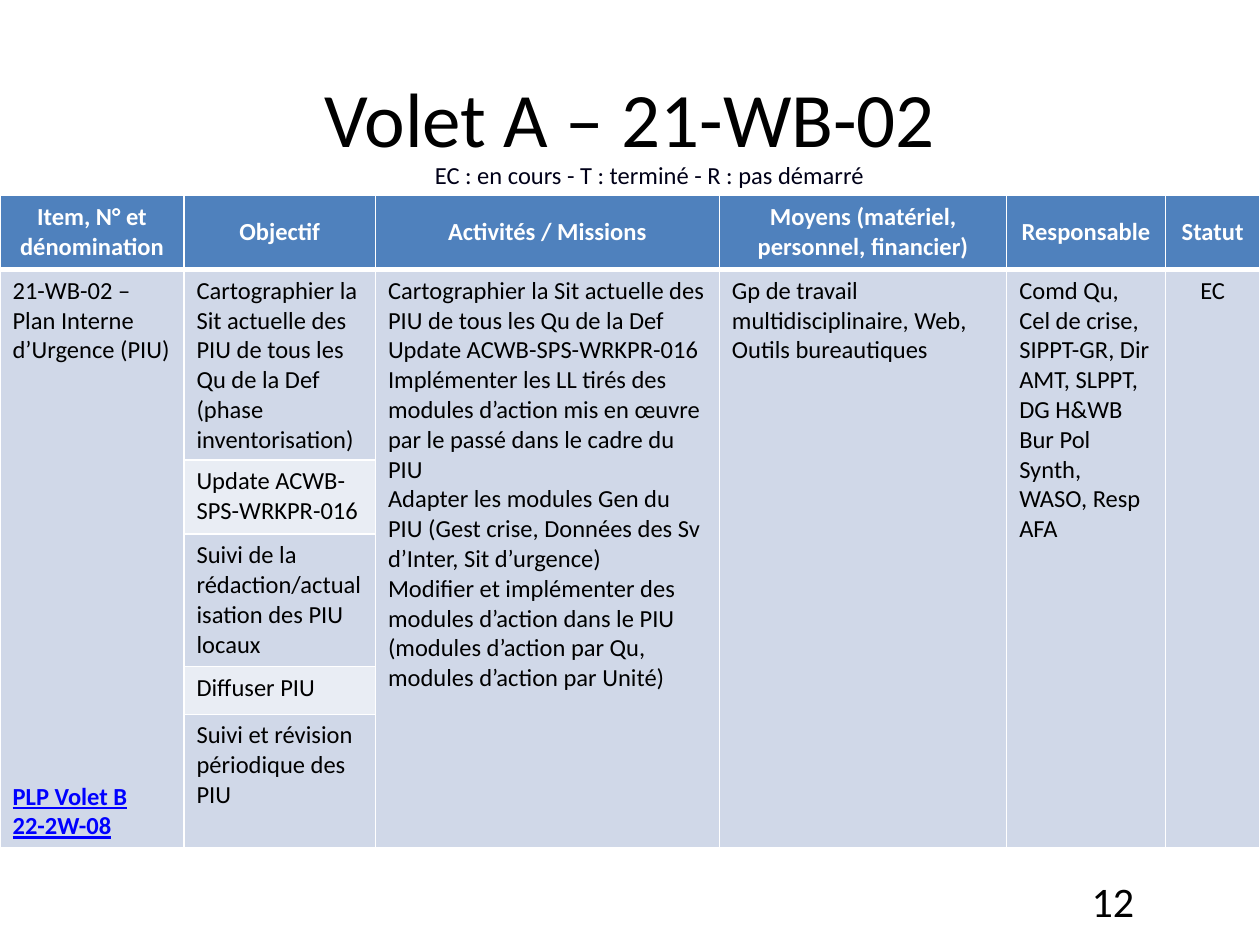
from pptx import Presentation
from pptx.dml.color import RGBColor
from pptx.enum.text import MSO_ANCHOR, PP_ALIGN
from pptx.oxml.ns import qn
from pptx.util import Inches, Pt
from lxml.etree import SubElement

FONT = "Calibri"
WHITE, BLACK, LINK = "FFFFFF", "000000", "0000FF"
HEADER_FILL, DARK_BAND, LIGHT_BAND = "4F81BD", "D0D8E8", "E9EDF4"

COLUMN_WIDTHS = [1.46, 1.52, 2.73, 2.28, 1.26, 0.75]
ROW_HEIGHTS = [0.59, 1.51, 0.59, 1.05, 0.38, 1.06]
OBJECTIVE_COLUMN = 1

HEADERS = [
    "Item, N° et dénomination",
    "Objectif",
    "Activités / Missions",
    "Moyens (matériel, personnel, financier)",
    "Responsable",
    "Statut",
]
OBJECTIVES = [
    "Cartographier la Sit actuelle des PIU de tous les Qu de la Def "
    "(phase inventorisation)",
    "Update ACWB-SPS-WRKPR-016",
    "Suivi de la rédaction/actualisation des PIU locaux",
    "Diffuser PIU",
    "Suivi et révision périodique des PIU",
]
ITEM = "21-WB-02 – Plan Interne d’Urgence (PIU)"
RELATED_PLAN = "PLP Volet B\v22-2W-08"
ACTIVITIES = [
    "Cartographier la Sit actuelle des PIU de tous les Qu de la Def",
    "Update ACWB-SPS-WRKPR-016",
    "Implémenter les LL tirés des modules d’action mis en œuvre par le passé "
    "dans le cadre du PIU",
    "Adapter les modules Gen du PIU (Gest crise, Données des Sv d’Inter, "
    "Sit d’urgence)",
    "Modifier et implémenter des modules d’action dans le PIU "
    "(modules d’action par Qu, modules d’action par Unité)",
]
MEANS = "Gp de travail multidisciplinaire, Web, Outils bureautiques"
RESPONSIBLE = (
    "Comd Qu, Cel de crise, SIPPT-GR, Dir AMT, SLPPT, DG H&WB Bur Pol Synth, "
    "WASO, Resp AFA"
)
# Cells that run down beside all the objectives, by column
SPANNING_CELLS = {
    0: [ITEM, RELATED_PLAN],
    2: ACTIVITIES,
    3: [MEANS],
    4: [RESPONSIBLE],
    5: ["EC"],
}


def rgb(color):
    return RGBColor.from_string(color)


def write_paragraph(paragraph, text, size=14, color=BLACK, bold=False,
                    align=PP_ALIGN.LEFT):
    paragraph.text = text
    paragraph.alignment = align
    font = paragraph.font
    font.name, font.size, font.bold = FONT, Pt(size), bold
    font.color.rgb = rgb(color)


def add_text(slide, box, text, size, color=BLACK, align=PP_ALIGN.CENTER,
             anchor=MSO_ANCHOR.MIDDLE):
    shape = slide.shapes.add_textbox(*map(Inches, box))
    frame = shape.text_frame
    frame.word_wrap = True
    frame.vertical_anchor = anchor
    write_paragraph(frame.paragraphs[0], text, size, color, align=align)


def style_cell(cell, fill, bottom_width=1):
    properties = cell._tc.get_or_add_tcPr()
    for side, width in (("L", 1), ("R", 1), ("T", 1), ("B", bottom_width)):
        line = SubElement(properties, qn(f"a:ln{side}"), w=str(Pt(width)))
        solid = SubElement(line, qn("a:solidFill"))
        SubElement(solid, qn("a:srgbClr"), val=WHITE)
    cell.fill.solid()
    cell.fill.fore_color.rgb = rgb(fill)


def write_cell(cell, texts, **style):
    frame = cell.text_frame
    for index, text in enumerate(texts):
        paragraph = frame.add_paragraph() if index else frame.paragraphs[0]
        write_paragraph(paragraph, text, **style)


def fill_header(table):
    for column, text in enumerate(HEADERS):
        cell = table.cell(0, column)
        style_cell(cell, HEADER_FILL, bottom_width=3)
        cell.vertical_anchor = MSO_ANCHOR.MIDDLE
        write_cell(cell, [text], color=WHITE, bold=True,
                   align=PP_ALIGN.CENTER)


def fill_body(table):
    last_row = len(OBJECTIVES)
    for row, objective in enumerate(OBJECTIVES, start=1):
        for column in range(len(HEADERS)):
            light = column == OBJECTIVE_COLUMN and row % 2 == 0
            style_cell(table.cell(row, column),
                       LIGHT_BAND if light else DARK_BAND)
        write_cell(table.cell(row, OBJECTIVE_COLUMN), [objective])

    for column, texts in SPANNING_CELLS.items():
        cell = table.cell(1, column)
        cell.merge(table.cell(last_row, column))
        is_status = column == len(HEADERS) - 1
        write_cell(cell, texts,
                   align=PP_ALIGN.CENTER if is_status else PP_ALIGN.LEFT)

    related_plan = table.cell(1, 0).text_frame.paragraphs[-1]
    related_plan.space_before = Pt(238)
    related_plan.font.bold = True
    related_plan.font.underline = True
    related_plan.font.color.rgb = rgb(LINK)


def add_action_table(slide, left, top):
    frame = slide.shapes.add_table(
        len(ROW_HEIGHTS), len(COLUMN_WIDTHS), Inches(left), Inches(top),
        Inches(sum(COLUMN_WIDTHS)), Inches(sum(ROW_HEIGHTS)))
    table = frame.table
    table.horz_banding = False
    for column, width in zip(table.columns, COLUMN_WIDTHS):
        column.width = Inches(width)
    for row, height in zip(table.rows, ROW_HEIGHTS):
        row.height = Inches(height)
    fill_header(table)
    fill_body(table)


def build_action_slide(presentation):
    slide = presentation.slides.add_slide(presentation.slide_layouts[6])
    add_text(slide, (0.5, 0.3, 9, 1.25), "Volet A – 21-WB-02", 44)
    add_action_table(slide, 0, 1.55)
    add_text(slide, (7.17, 6.95, 1.93, 0.4), "12", 24, align=PP_ALIGN.RIGHT)
    add_text(slide, (2.4, 1.17, 5.51, 0.38),
             "EC : en cours - T : terminé - R : pas démarré", 14,
             color="000018", anchor=MSO_ANCHOR.BOTTOM)


def main():
    presentation = Presentation()
    presentation.slide_width = Inches(10)
    presentation.slide_height = Inches(7.5)
    build_action_slide(presentation)
    presentation.save("out.pptx")


if __name__ == "__main__":
    main()
